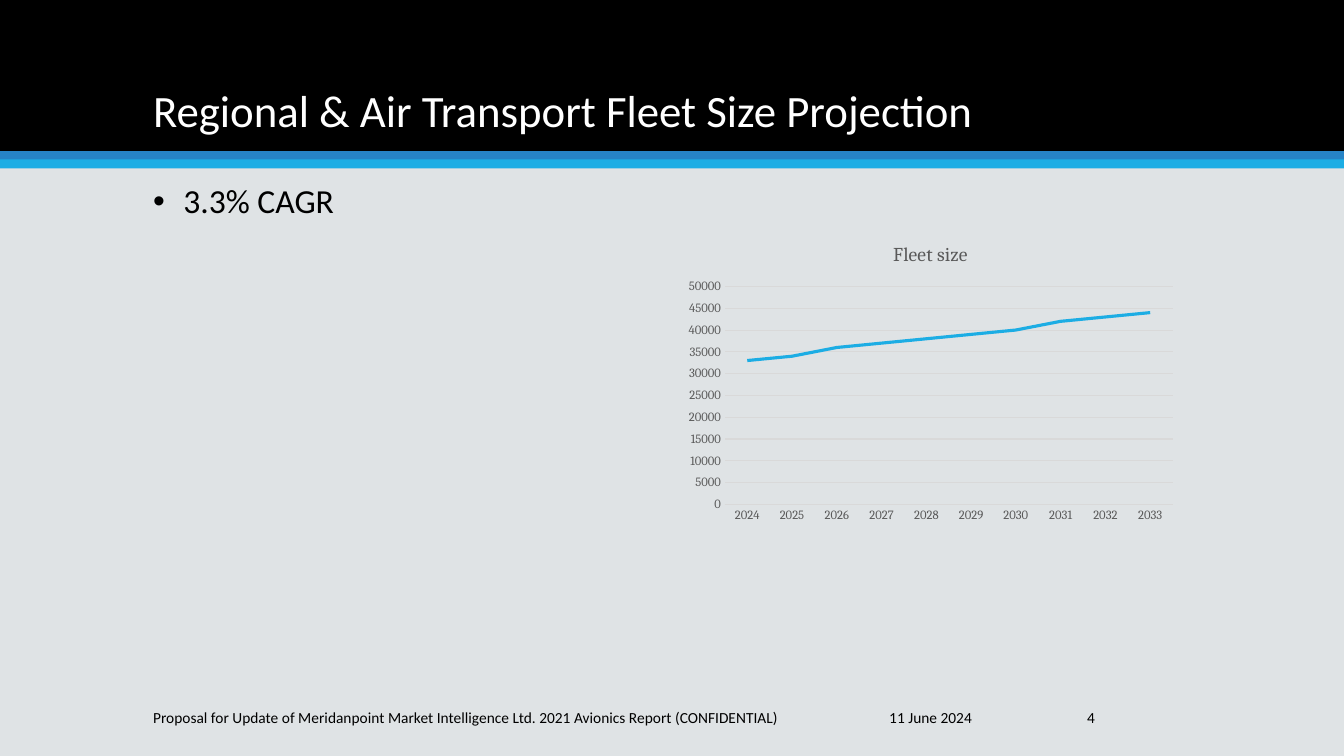
"""Builds the fleet size projection slide with its line chart."""
from lxml.etree import SubElement
from pptx import Presentation
from pptx.chart.data import CategoryChartData
from pptx.dml.color import RGBColor
from pptx.enum.chart import XL_CHART_TYPE, XL_TICK_MARK
from pptx.enum.shapes import MSO_SHAPE
from pptx.enum.text import MSO_ANCHOR, PP_ALIGN
from pptx.oxml.ns import qn
from pptx.util import Inches, Pt


def color(value):
    return RGBColor.from_string(value)


def add_text(text, left, top, width, height, size, fill="000000",
             anchor=MSO_ANCHOR.MIDDLE, align=PP_ALIGN.LEFT, spacing=1.0, bullet=False):
    box = page.shapes.add_textbox(Inches(left), Inches(top), Inches(width), Inches(height))
    frame = box.text_frame
    frame.word_wrap = True
    frame.vertical_anchor = anchor
    para = frame.paragraphs[0]
    para.text = text
    para.alignment = align
    para.line_spacing = spacing
    if bullet:
        properties = para._p.get_or_add_pPr()
        properties.set("marL", str(Inches(0.3)))
        properties.set("indent", str(Inches(-0.3)))
        SubElement(properties, qn("a:buFont")).set("typeface", "Arial")
        SubElement(properties, qn("a:buChar")).set("char", "•")
    para.font.name = "Calibri"
    para.font.size = Pt(size)
    para.font.color.rgb = color(fill)


deck = Presentation()
deck.slide_width = Inches(13.33)
deck.slide_height = Inches(7.5)
page = deck.slides.add_slide(deck.slide_layouts[6])
page.background.fill.solid()
page.background.fill.fore_color.rgb = color("DFE3E5")

for top, height, fill in [(0, 1.5, "000000"), (1.5, 0.09, "2683C6"), (1.58, 0.09, "1CADE4")]:
    band = page.shapes.add_shape(MSO_SHAPE.RECTANGLE, 0, Inches(top), deck.slide_width, Inches(height))
    band.shadow.inherit = False
    band.fill.solid()
    band.fill.fore_color.rgb = color(fill)
    band.line.fill.background()

add_text("Regional & Air Transport Fleet Size Projection", 1.42, 0.28, 10.5, 1.13, 32,
         fill="FFFFFF", anchor=MSO_ANCHOR.BOTTOM, spacing=0.9)
add_text("3.3% CAGR", 1.42, 1.78, 5, 4.75, 24, anchor=MSO_ANCHOR.TOP, spacing=0.9, bullet=True)

footers = [
    ("Proposal for Update of Meridanpoint Market Intelligence Ltd. 2021 Avionics Report (CONFIDENTIAL)",
     1.42, 6.83, PP_ALIGN.LEFT),
    ("11 June 2024", 8.42, 1.62, PP_ALIGN.CENTER),
    ("4", 10.25, 1.14, PP_ALIGN.CENTER),
]
for text, left, width, align in footers:
    add_text(text, left, 6.97, width, 0.3, 11, align=align)

fleet = CategoryChartData()
fleet.categories = [str(year) for year in range(2024, 2034)]
fleet.add_series("Fleet size", [33000, 34000, 36000, 37000, 38000, 39000, 40000, 42000, 43000, 44000])
chart = page.shapes.add_chart(XL_CHART_TYPE.LINE, Inches(6.73), Inches(2.25),
                              Inches(5), Inches(3), fleet).chart
chart.font.name = "Cambria"
chart.font.size = Pt(10)
chart.font.color.rgb = color("000000")
chart.has_legend = False
chart.has_title = True
chart.chart_title.include_in_layout = False
heading = chart.chart_title.text_frame.paragraphs[0]
heading.text = "Fleet size"
heading.font.name = "Cambria"
heading.font.size = Pt(14)
heading.font.bold = False
heading.font.color.rgb = color("595959")

for axis in (chart.category_axis, chart.value_axis):
    axis.major_tick_mark = XL_TICK_MARK.NONE
    axis.minor_tick_mark = XL_TICK_MARK.NONE
    axis.tick_labels.font.name = "Cambria"
    axis.tick_labels.font.size = Pt(9)
    axis.tick_labels.font.color.rgb = color("595959")

chart.value_axis.minimum_scale = 0
chart.value_axis.maximum_scale = 50000
chart.value_axis.major_unit = 5000
chart.value_axis.format.line.fill.background()
for line in (chart.category_axis.format.line, chart.value_axis.major_gridlines.format.line):
    line.color.rgb = color("D9D9D9")
    line.width = Pt(0.75)

chart.plots[0].vary_by_categories = False
series = chart.plots[0].series[0]
series.smooth = False
series.format.line.color.rgb = color("1CADE4")
series.format.line.width = Pt(2.25)

deck.save("out.pptx")
